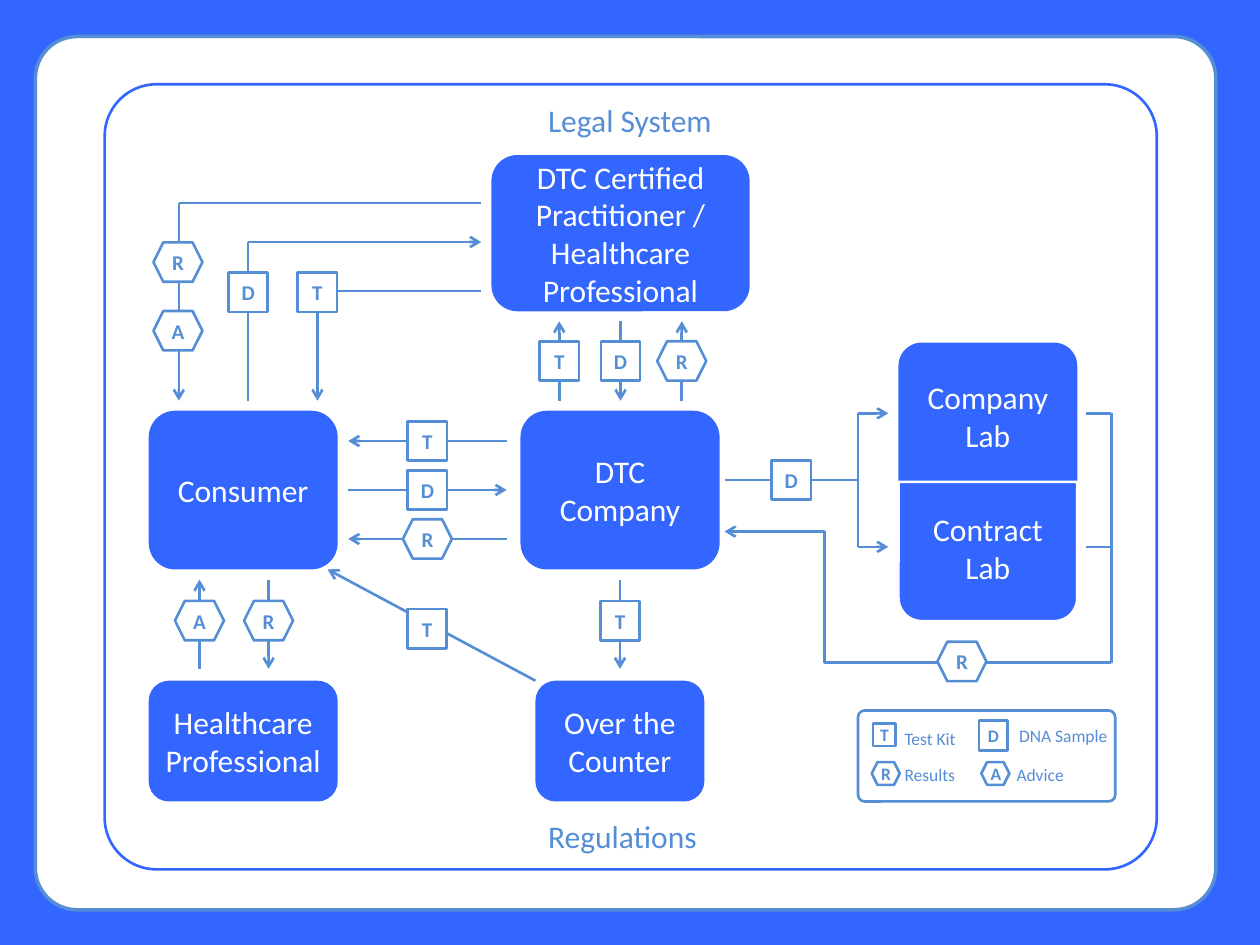
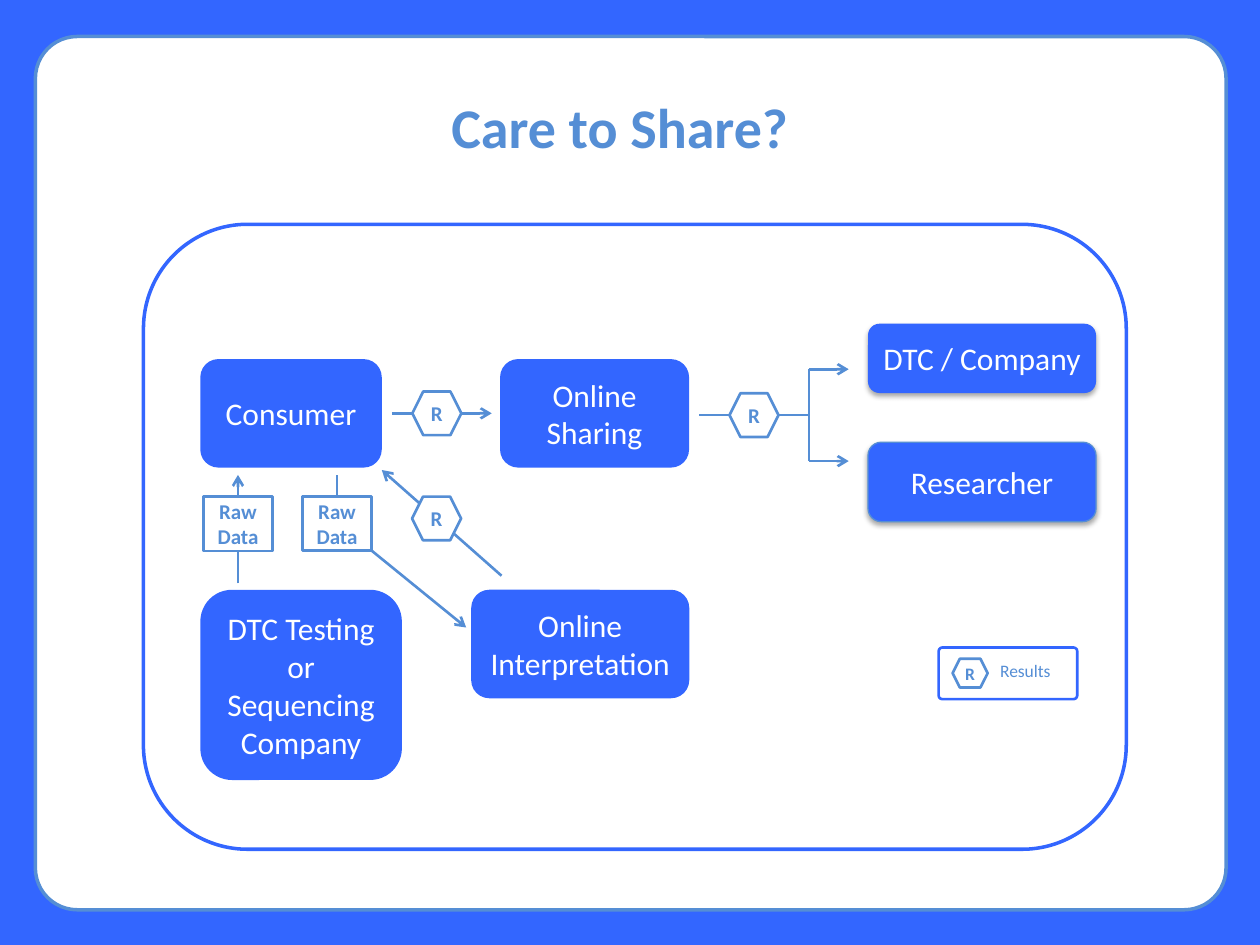
from dataclasses import dataclass
from lxml import etree
from pptx import Presentation
from pptx.dml.color import RGBColor
from pptx.enum import shapes, text
from pptx.oxml import ns
from pptx.util import Pt


@dataclass(frozen=True)
class Theme:
    primary: RGBColor = RGBColor(0x33, 0x66, 0xFF)
    accent: RGBColor = RGBColor(0x55, 0x8E, 0xD5)
    white: RGBColor = RGBColor(0xFF, 0xFF, 0xFF)
    font: str = "Calibri"
    title: int = 32
    body: int = 18
    token: int = 12
    legend: int = 10
    line: float = 1.5
    heavy_line: float = 2


THEME = Theme()
KIND = shapes.MSO_SHAPE
SQUARE = (22.5, 22.5)
HEXAGON = (28, 22.5)
TALL_HEXAGON = (28, 25)
RAW_DATA = (39.6, 31)


def write_text(shape, content, size, color, bold=False, inset=7.2, centered=True):
    frame = shape.text_frame
    frame.word_wrap = True
    frame.vertical_anchor = text.MSO_ANCHOR.MIDDLE
    frame.margin_left = Pt(inset)
    frame.margin_right = Pt(inset if centered else 0)
    frame.margin_top = frame.margin_bottom = Pt(min(inset, 3.6))
    for index, line in enumerate(content.split("\n")):
        paragraph = frame.add_paragraph() if index else frame.paragraphs[0]
        paragraph.alignment = text.PP_ALIGN.CENTER if centered else text.PP_ALIGN.LEFT
        run = paragraph.add_run()
        run.text = line
        run.font.name = THEME.font
        run.font.size = Pt(size)
        run.font.bold = bold
        run.font.color.rgb = color


def add_panel(slide, kind, box, fill=None, line=None, weight=THEME.line, corners=()):
    shape = slide.shapes.add_shape(kind, *map(Pt, box))
    shape.shadow.inherit = False
    for index, corner in enumerate(corners):
        shape.adjustments[index] = corner
    if fill is None:
        shape.fill.background()
    else:
        shape.fill.solid()
        shape.fill.fore_color.rgb = fill
    if line is None:
        shape.line.fill.background()
    else:
        shape.line.color.rgb = line
        shape.line.width = Pt(weight)
    return shape


def add_node(slide, box, label, inset=7.2, kind=KIND.ROUNDED_RECTANGLE, **style):
    shape = add_panel(slide, kind, box, THEME.primary, **style)
    write_text(shape, label, THEME.body, THEME.white, inset=inset)
    return shape


def add_token(slide, x, y, label, size=None, text_size=THEME.token):
    hexagonal = label in ("R", "A")
    width, height = size or (HEXAGON if hexagonal else SQUARE)
    kind = KIND.HEXAGON if hexagonal else KIND.RECTANGLE
    box = (x - width / 2, y - height / 2, width, height)
    shape = add_panel(slide, kind, box, THEME.white, THEME.accent)
    write_text(shape, label, text_size, THEME.accent, True, inset=2.9)
    return shape


def add_label(slide, box, content, size, bold=False, centered=True):
    shape = slide.shapes.add_textbox(*map(Pt, box))
    write_text(shape, content, size, THEME.accent, bold, centered=centered)


def add_link(slide, start, end, arrow=True, kind=shapes.MSO_CONNECTOR.STRAIGHT):
    connector = slide.shapes.add_connector(kind, *map(Pt, (*start, *end)))
    connector.line.color.rgb = THEME.accent
    connector.line.width = Pt(THEME.line)
    properties = connector._element.spPr
    if arrow:
        outline = properties.find(ns.qn("a:ln"))
        etree.SubElement(outline, ns.qn("a:tailEnd"), type="arrow")
    etree.SubElement(properties, ns.qn("a:effectLst"))
    return connector


def add_drop_shadow(shape):
    effects = shape._element.spPr.find(ns.qn("a:effectLst"))
    shadow = etree.SubElement(
        effects, ns.qn("a:outerShdw"), blurRad=str(Pt(3.1)), dist=str(Pt(1.8)),
        dir="5400000", rotWithShape="0")
    color = etree.SubElement(shadow, ns.qn("a:srgbClr"), val="000000")
    etree.SubElement(color, ns.qn("a:alpha"), val="35000")


def draw_exchange(slide, box, lanes, vertical=True, token_at=0.5, size=None):
    left, top, width, height = box
    gaps = max(len(lanes) - 1, 1)
    for index, (label, forward) in enumerate(lanes):
        if vertical:
            x = left + index * width / gaps
            ends = [(x, top), (x, top + height)]
            center = (x, top + token_at * height)
        else:
            y = top + index * height / gaps
            ends = [(left, y), (left + width, y)]
            center = (left + token_at * width, y)
        add_link(slide, *(ends if forward else ends[::-1]))
        add_token(slide, *center, label, size)


def draw_fork(slide, box, stem, label, size=None):
    left, top, width, height = box
    fork, middle = left + stem, top + height / 2
    add_link(slide, (left, middle), (fork, middle), arrow=False)
    add_link(slide, (fork, top), (fork, top + height), arrow=False)
    for y in (top, top + height):
        add_link(slide, (fork, y), (left + width, y))
    add_token(slide, left + stem / 2, middle, label, size)


def draw_legend(slide, box, line, entries):
    left, top, _, _ = box
    add_panel(slide, KIND.ROUNDED_RECTANGLE, box, THEME.white, line, corners=[0.072])
    for label, size, x, y, caption, caption_x, caption_y in entries:
        add_token(slide, left + x, top + y, label, size, THEME.legend)
        caption_box = (left + caption_x, top + caption_y, 62, 19.4)
        add_label(slide, caption_box, caption, THEME.legend, centered=False)


def draw_practitioner_loop(slide, box):
    left, top, width, height = box
    right, bottom, pitch = left + width, top + height, 39.6
    results_x, sample_x, kit_x = (left + pitch * lane for lane in range(3))
    sample_y, kit_y = top + 22.3, top + 50.3
    for x, y in ((results_x, top), (kit_x, kit_y)):
        add_link(slide, (right, y), (x, y), arrow=False)
        add_link(slide, (x, y), (x, bottom))
    add_link(slide, (sample_x, bottom), (sample_x, sample_y), arrow=False)
    add_link(slide, (sample_x, sample_y), (right, sample_y))
    add_token(slide, results_x - 0.5, top + 33.8, "R")
    add_token(slide, results_x - 0.5, top + 73, "A")
    add_token(slide, sample_x, top + 51, "D")
    add_token(slide, kit_x, top + 51, "T")


def draw_labs(slide, box):
    left, top, width, height = box
    half = height / 2
    add_node(slide, (left, top, width, half), "Company Lab",
             kind=KIND.ROUND_2_SAME_RECTANGLE)
    add_node(slide, (left, top + half, width, half), "Contract Lab",
             kind=KIND.ROUND_2_SAME_RECTANGLE, line=THEME.white, corners=[0, 0.167])


def draw_lab_results(slide, box):
    left, top, width, height = box
    right, bottom = left + width, top + height
    add_link(slide, (right, top), (right, bottom), arrow=False)
    for y in (top, top + 76.3):
        add_link(slide, (right, y), (right - 14.4, y), arrow=False)
    elbow = add_link(slide, (right, bottom), (left, bottom - 74.9),
                     kind=shapes.MSO_CONNECTOR.ELBOW)
    guides = elbow._element.spPr.find(ns.qn("a:prstGeom")).get_or_add_avLst()
    etree.SubElement(guides, ns.qn("a:gd"), name="adj1", fmla="val 74100")
    add_token(slide, left + 135.7, bottom - 0.7, "R")


def draw_raw_data_upload(slide, box):
    left, top, width, height = box
    token_width, token_height = RAW_DATA
    middle = top + 27.8
    raw_data = add_token(slide, left, middle, "Raw Data", RAW_DATA)
    stub = add_link(slide, (left, middle), (left, top), arrow=False)
    stub.begin_connect(raw_data, 0)
    corner = (left + token_width / 2, middle + token_height / 2)
    add_link(slide, corner, (left + width, top + height))


def start_slide(presentation, card_width):
    slide = presentation.slides.add_slide(presentation.slide_layouts[6])
    slide.background.fill.solid()
    slide.background.fill.fore_color.rgb = THEME.primary
    add_panel(slide, KIND.ROUNDED_RECTANGLE, (20.2, 20.9, card_width, 499),
              THEME.white, THEME.accent, THEME.heavy_line, [0.048])
    return slide


def build_testing_slide(presentation):
    slide = start_slide(presentation, 674.6)
    add_node(slide, (85, 234.7, 108, 90.7), "Consumer")
    add_node(slide, (297.4, 234.7, 113.8, 90.7), "DTC Company")
    add_node(slide, (280.8, 88.6, 147.6, 89.3),
             "DTC Certified Practitioner / Healthcare Professional")
    add_node(slide, (306, 389, 96.5, 69), "Over the Counter")
    add_node(slide, (85, 389, 108, 69), "Healthcare Professional", inset=5.76)
    draw_labs(slide, (513.4, 195.8, 102.2, 159.2))

    draw_exchange(slide, (199, 252, 90.5, 56),
                  [("T", False), ("D", True), ("R", False)], vertical=False)
    draw_exchange(slide, (319.6, 183.6, 70, 45.4),
                  [("T", False), ("D", True), ("R", False)])
    draw_exchange(slide, (114, 331.2, 39.5, 51), [("A", False), ("R", True)],
                  token_at=0.46)
    draw_exchange(slide, (354.3, 331.2, 0, 51), [("T", True)], token_at=0.46)
    add_link(slide, (306, 389), (187.2, 325.4))
    add_token(slide, 244, 359.3, "T")
    draw_practitioner_loop(slide, (102.2, 116, 172.8, 113))
    draw_fork(slide, (414, 236.2, 93.6, 76.3), 76.3, "D")
    draw_lab_results(slide, (414, 236.2, 221, 142.5))

    draw_legend(slide, (490.3, 406, 147, 52), THEME.accent, [
        ("T", (13, 13), 15.1, 13.8, "Test Kit", 19.5, 6.6),
        ("D", (16.5, 17), 77.4, 14.4, "DNA Sample", 85, 4.4),
        ("R", (16, 13), 15.9, 36, "Results", 19.5, 26.7),
        ("A", (16, 13), 78.5, 36, "Advice", 83.5, 26.7),
    ])
    add_panel(slide, KIND.ROUNDED_RECTANGLE, (59.8, 48.2, 601.2, 448.6),
              line=THEME.primary, corners=[0.066])
    add_label(slide, (224, 463, 263.5, 29), "Regulations", THEME.body)
    add_label(slide, (228.2, 54, 263.5, 29), "Legal System", THEME.body)


def build_sharing_slide(presentation):
    slide = start_slide(presentation, 680.4)
    add_label(slide, (87.8, 49, 532.8, 46), "Care to Share?", THEME.title, bold=True)
    add_panel(slide, KIND.ROUNDED_RECTANGLE, (82, 128.2, 561.6, 357.1),
              line=THEME.primary, weight=THEME.heavy_line)
    add_node(slide, (114.5, 205.2, 103.7, 62), "Consumer")
    add_node(slide, (285.8, 205.2, 108, 62), "Online\nSharing")
    add_node(slide, (269.3, 337, 124.6, 62), "Online\nInterpretation")
    add_node(slide, (114.5, 337, 115.2, 108.7), "DTC Testing or Sequencing Company")
    company = add_node(slide, (496, 185, 130.3, 39.6), "DTC / Company", inset=1)
    researcher = add_node(slide, (496, 252.7, 130.3, 45.4), "Researcher", inset=1,
                          line=THEME.accent, weight=0.75)
    for recipient in (company, researcher):
        add_drop_shadow(recipient)

    draw_exchange(slide, (224, 236.2, 57, 0), [("R", True)], vertical=False,
                  token_at=0.45, size=TALL_HEXAGON)
    draw_fork(slide, (399.6, 211, 85.4, 52.5), 62.6, "R", TALL_HEXAGON)
    draw_exchange(slide, (136, 271.4, 0, 62), [("Raw Data", False)],
                  token_at=0.45, size=RAW_DATA)
    draw_raw_data_upload(slide, (192.6, 271.4, 73.8, 87.2))
    add_link(slide, (286.6, 329), (218.2, 268.6))
    add_token(slide, 249.5, 296.3, "R", TALL_HEXAGON)
    draw_legend(slide, (536.4, 370, 79.2, 29.5), THEME.primary, [
        ("R", (20, 16.5), 18, 14.7, "Results", 28, 3.7),
    ])


def main():
    presentation = Presentation()
    presentation.slide_width = Pt(720)
    presentation.slide_height = Pt(540)
    build_testing_slide(presentation)
    build_sharing_slide(presentation)
    presentation.save("out.pptx")


if __name__ == "__main__":
    main()
